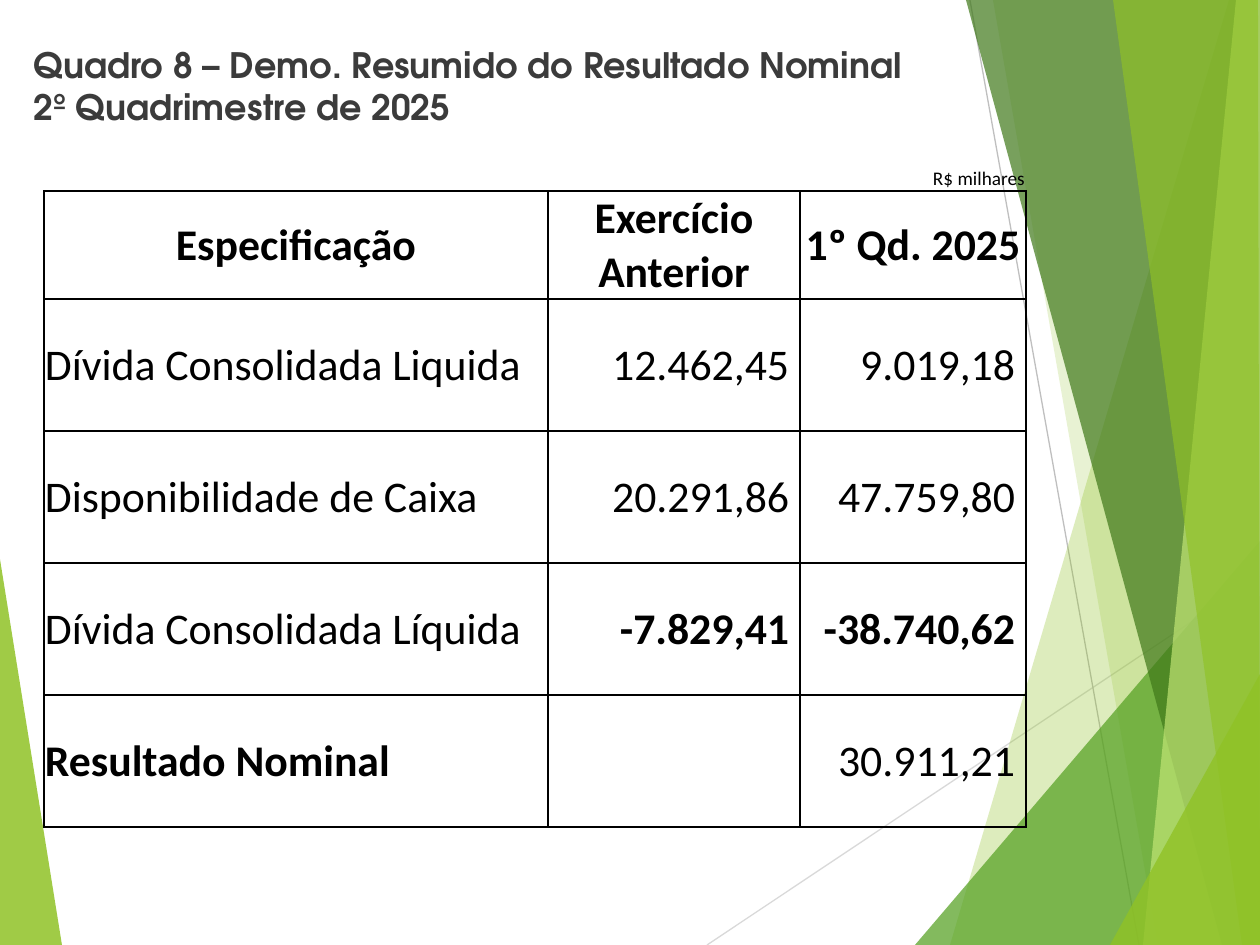
from lxml.etree import SubElement
from pptx import Presentation
from pptx.dml.color import RGBColor
from pptx.enum.shapes import MSO_CONNECTOR
from pptx.enum.text import MSO_ANCHOR, MSO_AUTO_SIZE, PP_ALIGN
from pptx.oxml.ns import qn
from pptx.util import Pt

PAGE_WIDTH, PAGE_HEIGHT = 1260, 945
EMU_PER_PX = 914400 / 126

FACETS = [
    ("90C226", 85, [(0, 559), (62, 945), (0, 945)]),
    ("90C226", 30, [(1229, 0), (950, 945), (1260, 945), (1260, 0)]),
    ("90C226", 20, [(993, 0), (1158, 945), (1260, 945), (1260, 0)]),
    ("54A021", 72, [(915, 945), (1260, 541), (1260, 945)]),
    ("3F7819", 70, [(966, 0), (1222, 945), (1260, 945), (1260, 0)]),
    ("C0E474", 70, [(1236, 0), (1143, 945), (1260, 945), (1260, 0)]),
    ("90C226", 65, [(1113, 0), (1242, 945), (1260, 945), (1258, 0)]),
    ("90C226", 80, [(1110, 945), (1260, 674), (1260, 945)]),
]
RAYS = [("D9D9D9", (707, 945, 1260, 576)), ("BFBFBF", (970, 0, 1139, 945))]

COLUMNS = [294, 164, 46, 252, 226]
ROWS = [73, 108, 132, 132, 132, 132]
HEADINGS = ["Especificação", "Exercício Anterior", "1º Qd. 2025"]
FIGURES = [
    ["Dívida Consolidada Liquida", "12.462,45", "9.019,18"],
    ["Disponibilidade de Caixa", "20.291,86", "47.759,80"],
    ["Dívida Consolidada Líquida", "-7.829,41", "-38.740,62"],
    ["Resultado Nominal", "", "30.911,21"],
]
BOLD_TEXTS = HEADINGS + ["-7.829,41", "-38.740,62", "Resultado Nominal"]


def px(length):
    """Turn a length in px into EMU."""
    return round(length * EMU_PER_PX)


def color(hex_value):
    """Turn a hex string into a colour."""
    return RGBColor.from_string(hex_value)


def set_values(target, values):
    """Set each named attribute of the target."""
    for name, value in values.items():
        setattr(target, name, value)


def format_font(font, name, size, hex_value, bold):
    """Set the face, size, colour and weight of a font."""
    set_values(font, {"name": name, "size": Pt(size), "bold": bold})
    font.color.rgb = color(hex_value)


def add_facet(page, left, top, hex_value, opacity, points):
    """Draw one translucent polygon relative to the given corner."""
    corners = [(left + x, top + y) for x, y in points]
    builder = page.shapes.build_freeform(*corners[0], scale=EMU_PER_PX)
    builder.add_line_segments(corners[1:], close=True)
    facet = builder.convert_to_shape()
    facet.shadow.inherit = False
    facet.line.fill.background()
    facet.fill.solid()
    facet.fill.fore_color.rgb = color(hex_value)
    tint = facet.element.spPr.find(qn("a:solidFill"))[0]
    SubElement(tint, qn("a:alpha"), val=str(opacity * 1000))


def add_ray(page, left, top, hex_value, ends):
    """Draw one thin line relative to the given corner."""
    x1, y1, x2, y2 = ends
    ray = page.shapes.add_connector(
        MSO_CONNECTOR.STRAIGHT, px(left + x1), px(top + y1), px(left + x2), px(top + y2)
    )
    ray.line.width = Pt(0.75)
    ray.line.color.rgb = color(hex_value)
    SubElement(ray.element.spPr, qn("a:effectLst"))


def add_backdrop(page, left, top):
    """Draw the green facets and the two thin rays."""
    add_facet(page, left, top, *FACETS[0])
    for ray in RAYS:
        add_ray(page, left, top, *ray)
    for facet in FACETS[1:]:
        add_facet(page, left, top, *facet)


def write_title(page, left, top, width, height):
    """Place the two-line title in its placeholder above the backdrop."""
    title = page.shapes.title
    title.element.getparent().append(title.element)
    set_values(title, {"left": px(left), "top": px(top), "width": px(width), "height": px(height)})
    frame = title.text_frame
    frame.text = "Quadro 8 – Demo. Resumido do Resultado Nominal\v2º Quadrimestre de 2025"
    set_values(frame, {
        "vertical_anchor": MSO_ANCHOR.TOP, "word_wrap": True, "auto_size": MSO_AUTO_SIZE.NONE,
    })
    para = frame.paragraphs[0]
    para.alignment = PP_ALIGN.LEFT
    for span in para.runs:
        format_font(span.font, "TeX Gyre Adventor", 20, "3B3B3B", True)


def set_borders(cell, visible_sides):
    """Give the named sides a thin black line and clear the others."""
    properties = cell._tc.get_or_add_tcPr()
    for side in "LRTB":
        border = SubElement(properties, qn(f"a:ln{side}"), w=str(Pt(1)))
        if side in visible_sides:
            fill = SubElement(border, qn("a:solidFill"))
            SubElement(fill, qn("a:srgbClr"), val="000000")
        else:
            SubElement(border, qn("a:noFill"))


def write_cell(cell, text, size, alignment, anchor=MSO_ANCHOR.MIDDLE, right=1):
    """Write one formatted text into a table cell."""
    set_values(cell, {
        "margin_left": px(1), "margin_right": px(right), "margin_top": px(1),
        "margin_bottom": 0, "vertical_anchor": anchor,
    })
    para = cell.text_frame.paragraphs[0]
    para.alignment = alignment
    if text:
        span = para.add_run()
        span.text = text
        format_font(span.font, "Calibri", size, "000000", text in BOLD_TEXTS)


def add_result_table(page, left, top):
    """Build the table of nominal results at the given corner."""
    table = page.shapes.add_table(
        len(ROWS), len(COLUMNS), px(left), px(top), px(sum(COLUMNS)), px(sum(ROWS))
    ).table
    set_values(table, {"first_row": False, "horz_banding": False})
    for column, width in zip(table.columns, COLUMNS):
        column.width = px(width)
    for index, height in enumerate(ROWS):
        table.rows[index].height = px(height)
        for cell in table.rows[index].cells:
            set_borders(cell, "LRTB" if index else "B")
            cell.fill.background()
    write_cell(table.cell(0, 4), "R$ milhares", 11, PP_ALIGN.RIGHT, MSO_ANCHOR.BOTTOM)
    for row, texts in enumerate([HEADINGS] + FIGURES, start=1):
        table.cell(row, 0).merge(table.cell(row, 2))
        for column, text in zip((0, 3, 4), texts):
            if row == 1:
                write_cell(table.cell(row, column), text, 25, PP_ALIGN.CENTER)
            elif column == 0:
                write_cell(table.cell(row, column), text, 25, PP_ALIGN.LEFT)
            else:
                write_cell(table.cell(row, column), text, 25, PP_ALIGN.RIGHT, right=11)


def main():
    """Build the slide and save it."""
    deck = Presentation()
    set_values(deck, {"slide_width": px(PAGE_WIDTH), "slide_height": px(PAGE_HEIGHT)})
    page = deck.slides.add_slide(deck.slide_layouts[5])
    add_backdrop(page, 0, 0)
    write_title(page, 21, 37, 1217, 145)
    add_result_table(page, 44, 118)
    deck.save("out.pptx")


if __name__ == "__main__":
    main()
